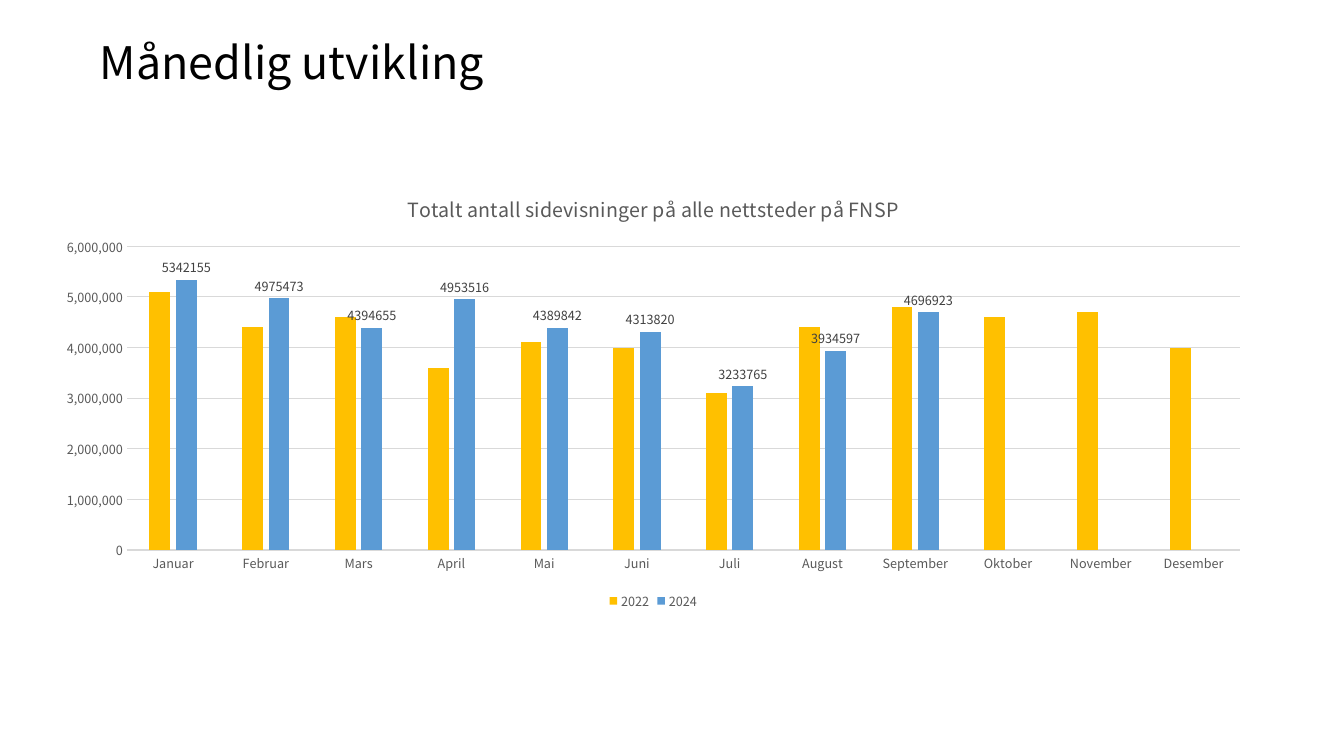
from pptx import Presentation
from pptx.chart.data import CategoryChartData
from pptx.dml.color import RGBColor
from pptx.enum.chart import XL_CHART_TYPE, XL_LABEL_POSITION, XL_LEGEND_POSITION, XL_TICK_MARK
from pptx.enum.text import MSO_ANCHOR, PP_ALIGN
from pptx.util import Inches, Pt

COLUMNS = XL_CHART_TYPE.COLUMN_CLUSTERED
OUTSIDE_END = XL_LABEL_POSITION.OUTSIDE_END
BOTTOM = XL_LEGEND_POSITION.BOTTOM
NO_TICKS = XL_TICK_MARK.NONE
MIDDLE = MSO_ANCHOR.MIDDLE
LEFT = PP_ALIGN.LEFT

FONT = "Noto Sans CJK TC"
BLACK, WHITE = "000000", "FFFFFF"
TEXT_GREY, LABEL_GREY, LINE_GREY = "595959", "404040", "D9D9D9"
YELLOW, BLUE = "FFC000", "5B9BD5"

MONTHS = ["Januar", "Februar", "Mars", "April", "Mai", "Juni", "Juli",
          "August", "September", "Oktober", "November", "Desember"]
VIEWS_2022 = [5100000, 4400000, 4600000, 3600000, 4100000, 4000000,
              3100000, 4400000, 4800000, 4600000, 4700000, 4000000]
VIEWS_2024 = [5342155, 4975473, 4394655, 4953516, 4389842, 4313820,
              3233765, 3934597, 4696923, None, None, None]


def color(hex_string):
    return RGBColor.from_string(hex_string)


def style_font(font, size, hex_string):
    font.name = FONT
    font.size = Pt(size)
    font.bold = False
    font.color.rgb = color(hex_string)


def style_line(line, hex_string):
    line.color.rgb = color(hex_string)
    line.width = Pt(0.75)


def add_title(page, left, top, width, height):
    title = page.shapes.title
    title.left, title.top = Inches(left), Inches(top)
    title.width, title.height = Inches(width), Inches(height)
    title.fill.solid()
    title.fill.fore_color.rgb = color(WHITE)
    frame = title.text_frame
    frame.text = "Månedlig utvikling"
    frame.vertical_anchor = MIDDLE
    para = frame.paragraphs[0]
    para.alignment = LEFT
    style_font(para.font, 32, BLACK)


def add_views_chart(page, left, top, width, height):
    data = CategoryChartData(number_format="General")
    data.categories = MONTHS
    data.add_series("2022", VIEWS_2022)
    data.add_series("2024", VIEWS_2024)
    chart = page.shapes.add_chart(COLUMNS, Inches(left), Inches(top),
                                  Inches(width), Inches(height), data).chart
    style_font(chart.font, 10, BLACK)

    # Heading and legend
    chart.has_title = True
    heading = chart.chart_title.text_frame
    heading.text = "Totalt antall sidevisninger på alle nettsteder på FNSP"
    style_font(heading.paragraphs[0].font, 14, TEXT_GREY)
    chart.chart_title.include_in_layout = False
    chart.has_legend = True
    chart.legend.position = BOTTOM
    chart.legend.include_in_layout = False
    style_font(chart.legend.font, 9, TEXT_GREY)

    # Axes
    months, views = chart.category_axis, chart.value_axis
    for axis in (months, views):
        axis.major_tick_mark = axis.minor_tick_mark = NO_TICKS
        style_font(axis.tick_labels.font, 9, TEXT_GREY)
    style_line(months.format.line, LINE_GREY)
    views.format.line.fill.background()
    style_line(views.major_gridlines.format.line, LINE_GREY)
    views.minimum_scale, views.maximum_scale = 0, 6000000
    views.major_unit = 1000000
    views.tick_labels.number_format = "#,##0"
    views.tick_labels.number_format_is_linked = False

    # Columns
    plot = chart.plots[0]
    plot.vary_by_categories = False
    plot.gap_width, plot.overlap = 219, -27
    for series, fill in zip(plot.series, (YELLOW, BLUE)):
        series.invert_if_negative = False
        series.format.fill.solid()
        series.format.fill.fore_color.rgb = color(fill)

    # Values above the 2024 columns
    labels = plot.series[1].data_labels
    labels.show_value = True
    labels.position = OUTSIDE_END
    style_font(labels.font, 9, LABEL_GREY)


def main():
    deck = Presentation()
    deck.slide_width, deck.slide_height = Inches(13.33), Inches(7.5)
    page = deck.slides.add_slide(deck.slide_layouts.get_by_name("Title Only"))
    add_title(page, 0.89, 0.29, 10.6, 0.64)
    add_views_chart(page, 0.42, 1.73, 12.12, 4.36)
    deck.save("out.pptx")


if __name__ == "__main__":
    main()
